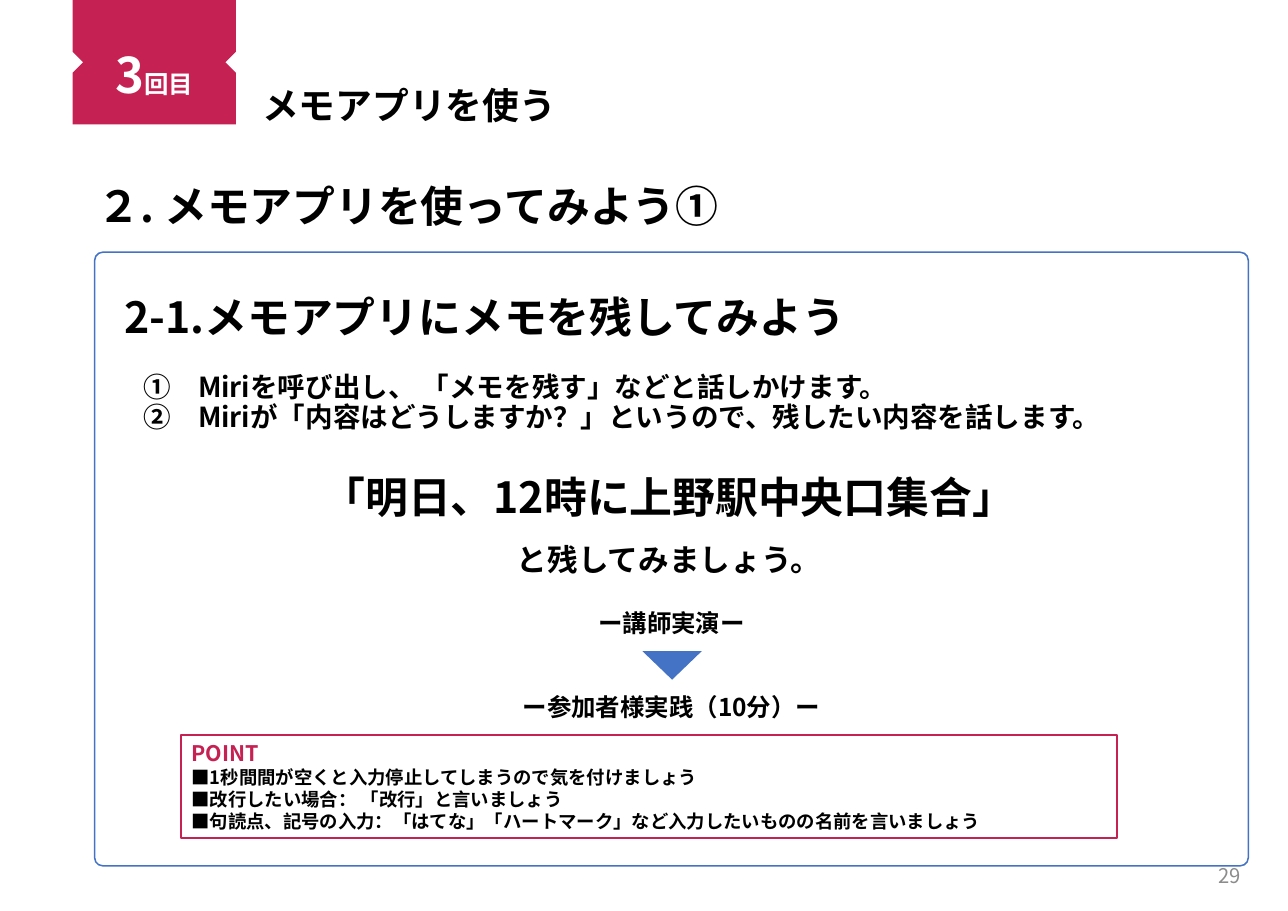
from lxml.etree import SubElement
from pptx import Presentation
from pptx.dml.color import RGBColor
from pptx.enum.shapes import MSO_SHAPE as Shape
from pptx.enum.text import MSO_ANCHOR as Anchor, PP_ALIGN as Align
from pptx.oxml.ns import qn
from pptx.util import Inches, Pt

FONT = "Noto Sans CJK JP"
RED, BLUE, BLACK, WHITE, GRAY = "C62153", "4472C4", "000000", "FFFFFF", "8C8C8C"


def tint(hue):
    return RGBColor.from_string(hue)


def style(run, size, hue=BLACK, bold=True):
    font = run.font
    font.size, font.bold, font.name = Pt(size), bold, FONT
    font.color.rgb = tint(hue)
    SubElement(run._r.get_or_add_rPr(), qn("a:ea")).set("typeface", FONT)


def write(frame, lines, align=Align.LEFT, anchor=Anchor.TOP, hue=BLACK, bold=True):
    """Fill a frame with (text, size) lines."""
    frame.word_wrap, frame.vertical_anchor = True, anchor
    frame.text = "\n".join(text for text, size in lines)
    for para, (text, size) in zip(frame.paragraphs, lines):
        para.alignment = align
        style(para.runs[0], size, hue, bold)
    return frame


def label(slide, x, y, w, h, lines, **look):
    box = slide.shapes.add_textbox(Inches(x), Inches(y), Inches(w), Inches(h))
    return write(box.text_frame, lines, **look)


def block(slide, kind, x, y, w, h, fill=None, line=None, width=1):
    part = slide.shapes.add_shape(kind, Inches(x), Inches(y), Inches(w), Inches(h))
    part.shadow.inherit = False
    if fill:
        part.fill.solid()
        part.fill.fore_color.rgb = tint(fill)
    else:
        part.fill.background()
    if line:
        part.line.color.rgb = tint(line)
        part.line.width = Pt(width)
    else:
        part.line.fill.background()
    return part


def add_head(slide, x, y, w, h):
    # Title
    title = slide.shapes.title
    title.left, title.top = Inches(x + 1.62), Inches(y + 0.7)
    title.width, title.height = Inches(w - 1.62), Inches(0.5)
    write(title.text_frame, [("メモアプリを使う", 24)])

    # Notched badge made of two mirrored halves
    half = h / 2
    for row, turn in enumerate((180, 0)):
        part = block(slide, Shape.SNIP_2_SAME_RECTANGLE,
                     x, y + row * half, 1.48, half, RED)
        part.rotation = turn
    frame = label(slide, x + 0.2, y + 0.36, 1.08, 0.64, [("3", 32)],
                  align=Align.CENTER, hue=WHITE)
    unit = frame.paragraphs[0].add_run()
    unit.text = "回目"
    style(unit, 16, WHITE)


def add_steps(slide, x, y, w, h):
    steps = ["①\u3000Miriを呼び出し、 「メモを残す」などと話しかけます。",
             "②\u3000Miriが「内容はどうしますか？」というので、残したい内容を話します。"]
    frame = label(slide, x, y, w, h, [(step, 18) for step in steps],
                  align=Align.JUSTIFY)
    for para in frame.paragraphs:
        para.line_spacing = Pt(20)
        props = para._p.get_or_add_pPr()
        props.set("marL", str(Inches(0.78)))
        props.set("indent", str(Inches(-0.17)))


def add_point(slide, x, y, w, h):
    box = block(slide, Shape.RECTANGLE, x, y, w, h, line=RED, width=1.5)
    frame = write(box.text_frame, [
        ("POINT", 14),
        ("■1秒間間が空くと入力停止してしまうので気を付けましょう", 12),
        ("■改行したい場合： 「改行」と言いましょう", 12),
        ("■句読点、記号の入力：「はてな」「ハートマーク」など入力したいものの名前を言いましょう", 12),
    ])
    frame.paragraphs[0].runs[0].font.color.rgb = tint(RED)


def add_panel(slide, x, y, w, h):
    frame = block(slide, Shape.ROUNDED_RECTANGLE, x, y, w, h, WHITE, BLUE)
    frame.adjustments[0] = 0.013
    label(slide, x + 0.17, y + 0.3, 9.11, 0.57,
          [("2-1.メモアプリにメモを残してみよう", 28)])
    add_steps(slide, x - 0.27, y + 1.04, w, 0.67)

    # Phrase to dictate
    phrase = label(slide, x + 0.45, y + 1.7, 9.52, 1.27,
                   [("「明日、12時に上野駅中央口集合」", 28),
                    ("と残してみましょう。", 20)], align=Align.CENTER)
    for para in phrase.paragraphs:
        para.line_spacing = 1.5

    # Demo, then practice
    for row, text in enumerate(("ー講師実演ー", "ー参加者様実践（10分）ー")):
        label(slide, x + 0.74, y + 3.23 + row * 0.77, 8.99, 0.26, [(text, 16)],
              align=Align.CENTER, anchor=Anchor.MIDDLE)
    arrow = block(slide, Shape.ISOSCELES_TRIANGLE,
                  x + 4.97, y + 3.62, 0.54, 0.26, BLUE)
    arrow.rotation = 180

    add_point(slide, x + 0.78, y + 4.38, 8.5, 0.94)


def main():
    deck = Presentation()
    deck.slide_width, deck.slide_height = Inches(11.69), Inches(8.27)
    slide = deck.slides.add_slide(deck.slide_layouts[5])
    add_head(slide, 0.66, 0, 7.47, 1.13)
    label(slide, 0.79, 1.58, 9.11, 0.57, [("２. メモアプリを使ってみよう①", 28)])
    add_panel(slide, 0.86, 2.29, 10.47, 5.57)
    # Page number
    label(slide, 8.36, 7.75, 3, 0.4, [("29", 13.2)], align=Align.RIGHT,
          anchor=Anchor.MIDDLE, hue=GRAY, bold=False)
    deck.save("out.pptx")


if __name__ == "__main__":
    main()
